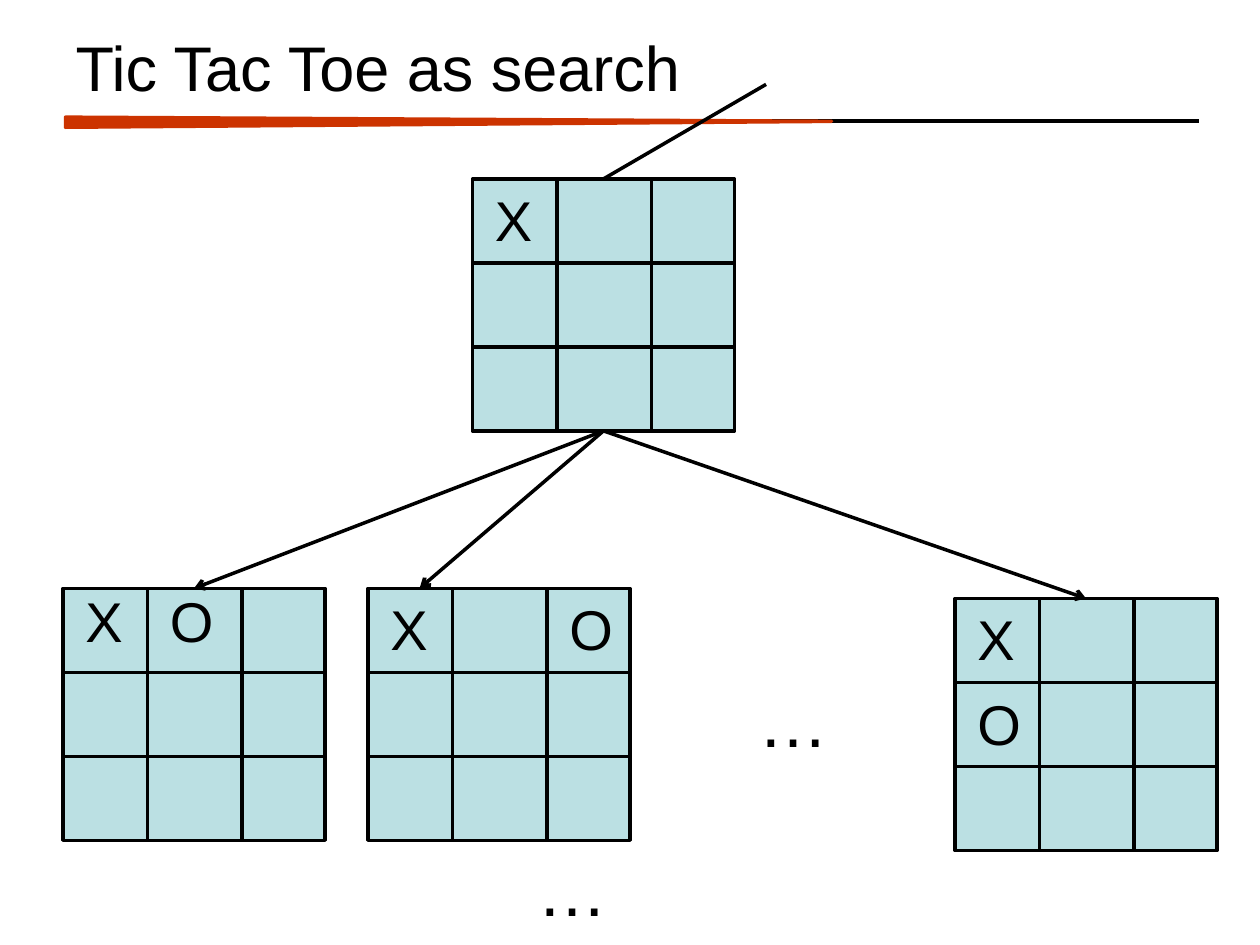
from lxml.etree import SubElement
from pptx import Presentation
from pptx.dml.color import RGBColor
from pptx.enum.shapes import MSO_CONNECTOR as Link, MSO_SHAPE as Preset
from pptx.enum.text import MSO_ANCHOR as Anchor, MSO_AUTO_SIZE as AutoSize, PP_ALIGN as Align
from pptx.oxml.ns import qn
from pptx.util import Inches, Pt

BLACK, RED, PALE_BLUE = "000000", "CC3300", "BBE0E3"
BOARD_WIDTH, BOARD_HEIGHT = 2.08, 2
TOP, BOTTOM = 0, 2


def paint(target, color):
    """Give a fill or a font a solid colour."""
    if hasattr(target, "solid"):
        target.solid()
        target.fore_color.rgb = RGBColor.from_string(color)
    else:
        target.color.rgb = RGBColor.from_string(color)


def add_line(shapes, x1, y1, x2, y2, arrow=False):
    """Draw a black straight line, with an arrowhead at its end on request."""
    line = shapes.add_connector(Link.STRAIGHT, Inches(x1), Inches(y1), Inches(x2), Inches(y2))
    line.line.width = Pt(2)
    paint(line.line.fill, BLACK)
    if arrow:
        SubElement(line.line._get_or_add_ln(), qn("a:tailEnd"), type="arrow")
    SubElement(line._element.spPr, qn("a:effectLst"))
    return line


def add_solid(shapes, preset, left, top, width, height, fill, outline):
    """Draw a flat filled shape with an outline."""
    solid = shapes.add_shape(preset, Inches(left), Inches(top), Inches(width), Inches(height))
    solid.shadow.inherit = False
    paint(solid.fill, fill)
    paint(solid.line.fill, outline)
    solid.line.width = Pt(2)
    return solid


def add_run(paragraph, text, size):
    """Add a black Arial run."""
    run = paragraph.add_run()
    run.text = text
    run.font.name = "Arial"
    run.font.size = Pt(size)
    paint(run.font, BLACK)


def add_label(slide, text, left, top, width, height, size):
    """Place a text box that wraps and grows with its text."""
    label = slide.shapes.add_textbox(Inches(left), Inches(top), Inches(width), Inches(height))
    label.text_frame.word_wrap = True
    label.text_frame.auto_size = AutoSize.SHAPE_TO_FIT_TEXT
    add_run(label.text_frame.paragraphs[0], text, size)


def add_header(slide, left, top, width, height):
    """Place the title and the tapering rule below it."""
    rule_left, rule_y, taper, thickness = left + 0.02, top + 0.79, 6.08, 0.08
    add_line(slide.shapes, rule_left, rule_y, rule_left + width, rule_y)
    wedge = add_solid(slide.shapes, Preset.ISOSCELES_TRIANGLE,
                      rule_left + (taper - thickness) / 2, rule_y + 0.01 - taper / 2,
                      thickness, taper, RED, RED)
    wedge.adjustments[0] = 0.417
    wedge.rotation = 90
    title = slide.shapes.title
    title.left, title.top = Inches(left), Inches(top)
    title.width, title.height = Inches(width), Inches(height)
    title.text_frame.vertical_anchor = Anchor.MIDDLE
    paragraph = title.text_frame.paragraphs[0]
    paragraph.alignment = Align.LEFT
    add_run(paragraph, "Tic Tac Toe as search", 36)


def add_board(slide, left, top, marks):
    """Draw a grouped three by three board with its marks and return its square."""
    right, bottom = left + BOARD_WIDTH, top + BOARD_HEIGHT
    board = slide.shapes.add_group_shape().shapes
    square = add_solid(board, Preset.RECTANGLE, left, top, BOARD_WIDTH, BOARD_HEIGHT,
                       PALE_BLUE, BLACK)
    for offset in (0.67, 1.42):
        add_line(board, left + offset, top, left + offset, bottom)
    for row in (1, 2):
        y = top + row * BOARD_HEIGHT / 3
        add_line(board, left, y, right, y)
    for mark, dx, dy in marks:
        add_label(slide, mark, left + dx, top + dy, 0.67, 0.64, 32)
    return square


def add_search_tree(slide, left, top):
    """Place the parent board, its successors and the links between them."""
    parent = add_board(slide, left + 3.25, top, [("X", 0.08, 0)])
    second_row = top + 3.25
    first = add_board(slide, left, second_row, [("X", 0.08, -0.06), ("O", 0.75, -0.06)])
    add_board(slide, left + 2.42, second_row, [("X", 0.08, 0), ("O", 1.5, 0)])
    last = add_board(slide, left + 7.08, second_row + 0.08, [("X", 0.08, 0), ("O", 0.08, 0.67)])

    root_x, root_y = left + 3.25 + BOARD_WIDTH / 2, top + BOARD_HEIGHT
    for successor in (first, None, last):
        branch = add_line(slide.shapes, root_x, root_y, left + 2.83, second_row, arrow=True)
        branch.begin_connect(parent, BOTTOM)
        if successor is not None:
            branch.end_connect(successor, TOP)
    to_ancestor = add_line(slide.shapes, root_x, top, left + 5.58, top - 0.75)
    to_ancestor.begin_connect(parent, TOP)

    for dx, dy in ((5.42, 3.91), (3.67, 5.25)):
        add_label(slide, "…", left + dx, top + dy, 1.42, 0.77, 40)


def main():
    """Build and save the slide."""
    deck = Presentation()
    deck.slide_width, deck.slide_height = Inches(10), Inches(7.5)
    slide = deck.slides.add_slide(deck.slide_layouts.get_by_name("Title Only"))
    add_header(slide, 0.5, 0.17, 9, 0.72)
    add_search_tree(slide, 0.5, 1.42)
    deck.save("out.pptx")


if __name__ == "__main__":
    main()
